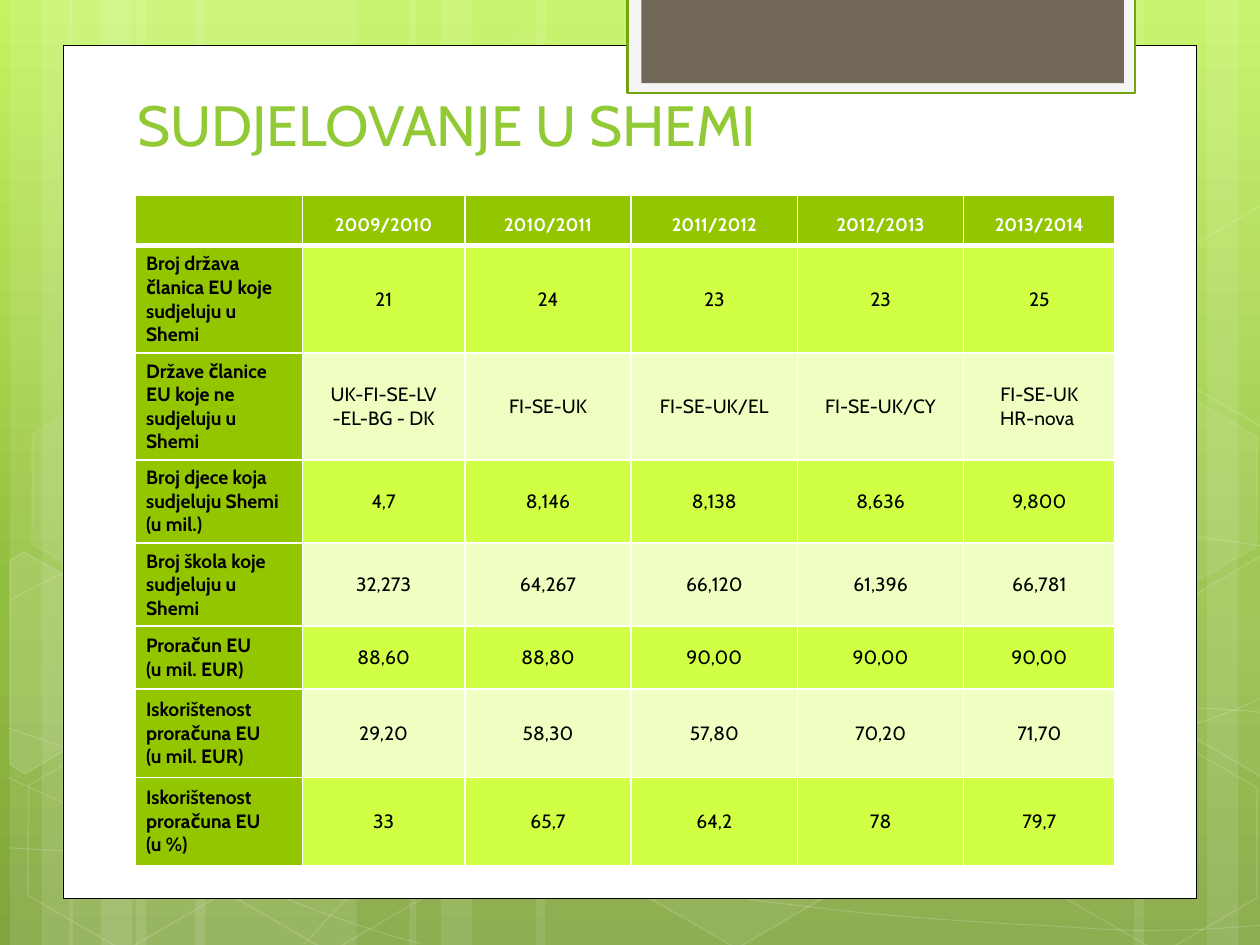
from copy import deepcopy

from lxml.etree import SubElement
from pptx import Presentation
from pptx.dml.color import RGBColor
from pptx.enum.shapes import MSO_SHAPE
from pptx.enum.text import MSO_ANCHOR, PP_ALIGN
from pptx.oxml.ns import qn
from pptx.util import Inches, Pt

FONT = "Cabin"
COLORS = {
    "sky": "C3F35F", "meadow": "93BF3F", "moss": "81A53E",
    "white": "FFFFFF", "black": "000000",
    "tab_edge": "F5F5F5", "tab_line": "74A510", "tab": "71685A",
    "title": "91CA35", "header": "94C600", "band_dark": "D0FF44", "band_light": "EFFFC1",
}


def style(shape, fill=None, line=None, width=1, fill_alpha=100, line_alpha=100):
    """Set fill and line, each with an opacity in percent."""
    shape.shadow.inherit = False
    for part, color in ((shape.fill, fill), (shape.line.fill, line)):
        if color is None:
            part.background()
            continue
        part.solid()
        part.fore_color.rgb = RGBColor.from_string(COLORS[color])
    if line:
        shape.line.width = Pt(width)
    properties = shape.element.spPr
    for parent, alpha in ((properties, fill_alpha), (properties.find(qn("a:ln")), line_alpha)):
        color_node = parent.find(qn("a:solidFill") + "/" + qn("a:srgbClr"))
        if color_node is not None and alpha < 100:
            SubElement(color_node, qn("a:alpha"), val=str(alpha * 1000))


def add_outline(points, close):
    builder = shapes.build_freeform(Inches(points[0][0]), Inches(points[0][1]))
    builder.add_line_segments([(Inches(x), Inches(y)) for x, y in points[1:]], close=close)
    return builder.convert_to_shape()


prs = Presentation()
prs.slide_width, prs.slide_height = Inches(10), Inches(7.5)
slide = prs.slides.add_slide(prs.slide_layouts[6])
shapes = slide.shapes

# Background gradient, light at the top
backdrop = slide.background.fill
backdrop.gradient()
backdrop.gradient_angle = 270
first_stop = next(slide.element.iter(qn("a:gs")))
first_stop.addnext(deepcopy(first_stop))
for stop, color, position in zip(backdrop.gradient_stops, ("sky", "meadow", "moss"), (0, 0.62, 1)):
    stop.color.rgb = RGBColor.from_string(COLORS[color])
    stop.position = position

# Pale vertical stripes
stripes = [(1.08, 1.75), (0.08, 0.5), (0.33, 0.83), (1.55, 1.75), (0.55, 0.5), (0.8, 0.83),
           (7.33, 1.75), (9.58, 0.5), (9, 0.83), (4.25, 3.08), (3.25, 0.5), (3.5, 0.83)]
for left, width in stripes:
    stripe = shapes.add_shape(MSO_SHAPE.RECTANGLE, Inches(left), 0, Inches(width), Inches(7.5))
    style(stripe, "white", fill_alpha=10)

# Thin waves: a start point, then two control points and an end point per arc
waves = [
    [(0.07, 6.73), (0.61, 6.76), (1.15, 6.79), (1.9, 6.78), (2.65, 6.77), (3.58, 6.75), (4.58, 6.65),
     (5.58, 6.55), (7, 6.36), (7.92, 6.17), (8.83, 5.98), (9.77, 5.68), (10.07, 5.51)],
    [(0.07, 4.77), (0.36, 4.61), (0.65, 4.46), (1.21, 4.31), (1.78, 4.16), (2.59, 3.94), (3.47, 3.87),
     (4.36, 3.8), (5.44, 3.79), (6.54, 3.87), (7.64, 3.95), (9.47, 4.26), (10.07, 4.34)],
    [(0.06, 6.17), (1.27, 6.72), (2.47, 7.27), (3.34, 7.49)],
    [(0.07, 5.78), (0.38, 5.89), (0.7, 6), (1.28, 6.16), (1.86, 6.31), (2.73, 6.56), (3.57, 6.73),
     (4.4, 6.9), (5.45, 7.08), (6.28, 7.18), (7.11, 7.29), (8, 7.33), (8.53, 7.36),
     (9.05, 7.4), (9.19, 7.38), (9.45, 7.38), (9.71, 7.37), (9.89, 7.35), (10.07, 7.34)],
    [(2.42, 7.49), (2.6, 7.29), (2.78, 7.09), (3.02, 6.91), (3.26, 6.73), (3.6, 6.53), (3.88, 6.39),
     (4.16, 6.25), (4.33, 6.19), (4.7, 6.09), (5.06, 5.99), (5.73, 5.85), (6.08, 5.78),
     (6.44, 5.71), (6.49, 5.71), (6.8, 5.69), (7.11, 5.66), (7.6, 5.63), (7.94, 5.62),
     (8.29, 5.61), (8.86, 5.62), (8.86, 5.62), (9.08, 5.62), (9.31, 5.62), (9.53, 5.62),
     (9.71, 5.63), (9.88, 5.64), (9.97, 5.65), (10.06, 5.66), (10.03, 5.65), (10.06, 5.66)],
]
for wave in waves:
    curve = add_outline(wave[::3], False)
    style(curve, line="white", width=0.5, line_alpha=20)
    # Turn each straight segment into a Bezier arc
    for arc, segment in enumerate(list(curve.element.iter(qn("a:lnTo")))):
        segment.tag = qn("a:cubicBezTo")
        end_point = segment[0]
        for x, y in wave[3 * arc + 1:3 * arc + 3]:
            control = deepcopy(end_point)
            control.set("x", str(Inches(x) - curve.left))
            control.set("y", str(Inches(y) - curve.top))
            end_point.addprevious(control)

# Hexagons: left, top, fill opacity, line opacity
hexagons = [(3.34, 0.36, 4, 8), (4.97, 5.89, 6, 12), (0.11, 5.91, 0, 12), (0.14, 3.12, 7, 8),
            (1.74, 5.92, 0, 12), (7.53, 4.53, 10, 12), (8.34, 5.93, 0, 12), (8.34, 3.14, 7, 8)]
for left, top, fill_alpha, line_alpha in hexagons:
    hexagon = shapes.add_shape(MSO_SHAPE.HEXAGON, Inches(left), Inches(top), Inches(1.75), Inches(1.52))
    hexagon.adjustments[0] = 0.285
    hexagon.rotation = 30
    style(hexagon, "white" if fill_alpha else None, "white", 1, fill_alpha, line_alpha)

# Hexagons cut off by the slide edges
cut_hexagons = [
    ([(0.08, 4.45), (0.19, 4.38), (0.96, 4.82), (0.95, 5.7), (0.2, 6.14), (0.08, 6.07)], 10),
    ([(9.26, 4.85), (10.01, 4.41), (10.09, 4.46), (10.09, 6.13), (10.02, 6.17), (9.26, 5.73)], 4),
    ([(9.26, 2.07), (10.01, 1.63), (10.1, 1.68), (10.09, 3.35), (10.02, 3.39), (9.26, 2.95)], 0),
]
for corners, fill_alpha in cut_hexagons:
    style(add_outline(corners, True), "white" if fill_alpha else None, "white", 1, fill_alpha, 12)

# White page and the tab at its top
panels = [((0.5, 0.36, 9, 6.77), "white", "black", 0.5),
          ((4.98, -0.02, 4.03, 0.76), "tab_edge", "tab_line", 1.25),
          ((5.09, -0.02, 3.83, 0.68), "tab", None, 1)]
for box, fill, line, width in panels:
    style(shapes.add_shape(MSO_SHAPE.RECTANGLE, *map(Inches, box)), fill, line, width)

# Title
title = shapes.add_textbox(Inches(0.99), Inches(0.71), Inches(7.76), Inches(0.6)).text_frame
title.word_wrap = True
title.margin_top = title.margin_bottom = 0
title.text = "SUDJELOVANJE U SHEMI"
title_font = title.paragraphs[0].runs[0].font
title_font.name, title_font.size = FONT, Pt(32.4)
title_font.color.rgb = RGBColor.from_string(COLORS["title"])

# Participation table
rows = [
    ["", "2009/2010", "2010/2011", "2011/2012", "2012/2013", "2013/2014"],
    ["Broj država članica EU koje sudjeluju u Shemi", "21", "24", "23", "23", "25"],
    ["Države članice EU koje ne sudjeluju u Shemi", "UK-FI-SE-LV\n-EL-BG - DK", "FI-SE-UK",
     "FI-SE-UK/EL", "FI-SE-UK/CY", "FI-SE-UK\nHR-nova "],
    ["Broj djece koja sudjeluju Shemi (u mil.)", "4,7", "8,146", "8,138", "8,636", "9,800"],
    ["Broj škola koje sudjeluju u Shemi", "32,273", "64,267", "66,120", "61,396", "66,781"],
    ["Proračun EU\n(u mil. EUR)", "88,60", "88,80", "90,00", "90,00", "90,00"],
    ["Iskorištenost proračuna EU\n(u mil. EUR)", "29,20", "58,30", "57,80", "70,20", "71,70"],
    ["Iskorištenost proračuna EU\n(u %)", "33", "65,7", "64,2", "78", "79,7"],
]
column_widths = [1.33, 1.29, 1.32, 1.32, 1.32, 1.2]
row_heights = [0.39, 0.85, 0.85, 0.66, 0.66, 0.5, 0.7, 0.7]
table = shapes.add_table(len(rows), len(column_widths), Inches(1.07), Inches(1.55),
                         Inches(sum(column_widths)), Inches(sum(row_heights))).table
for column, width in zip(table.columns, column_widths):
    column.width = Inches(width)
for row, height in zip(table.rows, row_heights):
    row.height = Inches(height)

for r, row in enumerate(rows):
    for c, text in enumerate(row):
        cell = table.cell(r, c)
        is_header, is_label = r == 0, c == 0
        band = "header" if is_header or is_label else "band_dark" if r % 2 else "band_light"
        cell.text_frame.text = text
        cell.vertical_anchor = MSO_ANCHOR.MIDDLE
        cell.margin_left = cell.margin_right = Inches(0.09)
        for paragraph in cell.text_frame.paragraphs:
            paragraph.alignment = PP_ALIGN.LEFT if is_label else PP_ALIGN.CENTER
            for run in paragraph.runs:
                run.font.name = FONT
                run.font.size = Pt(18 if is_header else 11)
                run.font.bold = is_header or is_label
                run.font.color.rgb = RGBColor.from_string(COLORS["white" if is_header else "black"])
                if is_header:
                    run.font._element.set("baseline", "2000")
        # White borders, thicker between the header and the body
        cell_properties = cell._tc.get_or_add_tcPr()
        for side in ("lnL", "lnR", "lnT", "lnB"):
            thick = (r, side) in ((0, "lnB"), (1, "lnT"))
            border = SubElement(cell_properties, qn("a:" + side), w=str(Pt(3 if thick else 1)))
            SubElement(SubElement(border, qn("a:solidFill")), qn("a:srgbClr"), val=COLORS["white"])
        cell.fill.solid()
        cell.fill.fore_color.rgb = RGBColor.from_string(COLORS[band])

prs.save("out.pptx")
